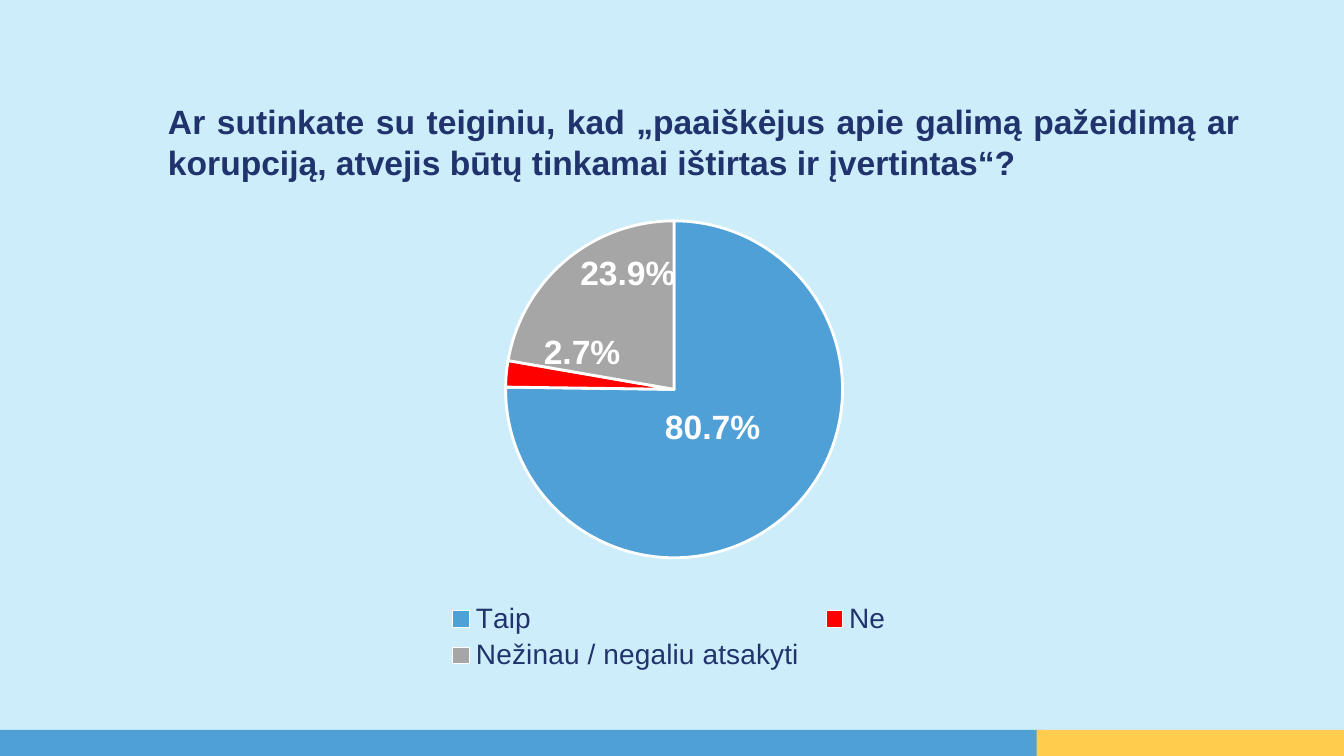
from pptx import Presentation
from pptx import util as u
from pptx.chart import data as chart_data
from pptx.dml.color import RGBColor
from pptx.enum import chart as chart_enum, shapes, text
from pptx.oxml import parse_xml
from pptx.oxml.ns import nsdecls

SKY = RGBColor(0xCD, 0xED, 0xFB)
BLUE = RGBColor(0x50, 0xA0, 0xD8)
YELLOW = RGBColor(0xFF, 0xCC, 0x4E)
RED = RGBColor(0xFF, 0x00, 0x00)
GREY = RGBColor(0xA6, 0xA6, 0xA6)
NAVY = RGBColor(0x20, 0x33, 0x6C)
WHITE = RGBColor(0xFF, 0xFF, 0xFF)

QUESTION = ("Ar sutinkate su teiginiu, kad „paaiškėjus apie galimą pažeidimą ar "
            "korupciją, atvejis būtų tinkamai ištirtas ir įvertintas“?")
ANSWERS = [
    ("Taip", 0.807, BLUE, (-2.3, -4.4)),
    ("Ne", 0.027, RED, (-0.9, -5.8)),
    ("Nežinau / negaliu atsakyti", 0.239, GREY, (0.9, -10.4)),
]
SERIES = {
    "Series 1": [answer[1] for answer in ANSWERS] + [None],
    "Series 2": [None] * 4,
    "Series 3": [None] * 4,
}
TITLE_FONT = {"name": "Arial", "size": u.Pt(24), "bold": True}
LABEL_FONT = TITLE_FONT
LEGEND_FONT = {"name": "Arial", "size": u.Pt(20), "bold": False}


def set_format(target, values):
    for name, value in values.items():
        setattr(target, name, value)


def set_font(font, values, color):
    set_format(font, values)
    font.color.rgb = color


def set_layout(element, index, percents, modes=None):
    for old_layout in element.xpath("./c:layout"):
        element.remove(old_layout)
    values = dict(modes or {})
    values.update({name: round(percent / 100, 4) for name, percent in percents.items()})
    settings = "".join(f'<c:{name} val="{value}"/>' for name, value in values.items())
    element.insert(index, parse_xml(
        f'<c:layout {nsdecls("c")}><c:manualLayout>{settings}</c:manualLayout></c:layout>'))


def add_question(slide, left, top, width, height):
    title = slide.shapes.title
    set_format(title, {"left": u.Pt(left), "top": u.Pt(top),
                       "width": u.Pt(width), "height": u.Pt(height)})
    frame = title.text_frame
    frame.text = QUESTION
    set_format(frame, {"word_wrap": True, "vertical_anchor": text.MSO_ANCHOR.TOP,
                       "auto_size": text.MSO_AUTO_SIZE.SHAPE_TO_FIT_TEXT})
    paragraph = frame.paragraphs[0]
    paragraph.alignment = text.PP_ALIGN.JUSTIFY
    set_font(paragraph.runs[0].font, TITLE_FONT, NAVY)


def add_answer_chart(slide, left, top, width, height):
    answers = chart_data.CategoryChartData(number_format="0.0%")
    answers.categories = [answer[0] for answer in ANSWERS]
    for name, values in SERIES.items():
        answers.add_series(name, values)
    chart = slide.shapes.add_chart(
        chart_enum.XL_CHART_TYPE.PIE, u.Pt(left), u.Pt(top),
        u.Pt(width), u.Pt(height), answers).chart
    chart.replace_data(answers)
    set_format(chart, {"has_title": False, "has_legend": True})
    set_font(chart.font, LEGEND_FONT, NAVY)
    set_format(chart.legend, {"position": chart_enum.XL_LEGEND_POSITION.BOTTOM,
                              "include_in_layout": False})
    set_font(chart.legend.font, LEGEND_FONT, NAVY)

    plot = chart.plots[0]
    plot.vary_by_categories = True
    series = plot.series[0]
    set_format(series.data_labels, {"show_value": True, "show_percentage": False,
                                    "number_format": "0.0%",
                                    "number_format_is_linked": False})
    set_font(series.data_labels.font, LABEL_FONT, WHITE)
    for index, (_, _, color, _) in enumerate(ANSWERS):
        point = series.points[index]
        point.format.fill.solid()
        point.format.fill.fore_color.rgb = color
        point.format.line.color.rgb = WHITE
        point.format.line.width = u.Pt(2)
        set_font(point.data_label.font, LABEL_FONT, WHITE)
        point.data_label.position = chart_enum.XL_LABEL_POSITION.CENTER

    space = chart._chartSpace
    for label, answer in zip(space.xpath(".//c:ser/c:dLbls/c:dLbl"), ANSWERS):
        set_layout(label, 1, dict(zip("xy", answer[3])))
    edges = {"xMode": "edge", "yMode": "edge"}
    set_layout(space.xpath(".//c:plotArea")[0], 0,
               {"x": 31.8, "y": 7.4, "w": 37.5, "h": 68.5},
               {"layoutTarget": "inner", **edges})
    legend = space.xpath(".//c:legend")[0]
    set_layout(legend, 1, {"x": 24, "y": 84, "w": 52, "h": 16}, edges)
    legend.insert(1, parse_xml(
        f'<c:legendEntry {nsdecls("c")}><c:idx val="{len(ANSWERS)}"/>'
        '<c:delete val="1"/></c:legendEntry>'))


def add_footer(slide, left, top, width, height):
    blue_width = 744.5
    yellow_left = 740.5
    bands = [(left, blue_width, BLUE),
             (left + yellow_left, width - yellow_left, YELLOW)]
    for band_left, band_width, color in bands:
        shape = slide.shapes.add_shape(
            shapes.MSO_SHAPE.RECTANGLE, u.Pt(band_left), u.Pt(top),
            u.Pt(band_width), u.Pt(height))
        shape.shadow.inherit = False
        shape.fill.solid()
        shape.fill.fore_color.rgb = color
        shape.line.fill.background()


def main():
    presentation = Presentation()
    set_format(presentation, {"slide_width": u.Pt(960), "slide_height": u.Pt(540)})
    slide = presentation.slides.add_slide(presentation.slide_layouts[5])
    slide.background.fill.solid()
    slide.background.fill.fore_color.rgb = SKY
    add_answer_chart(slide, 156.5, 131.8, 643, 351.4)
    add_footer(slide, 0, 521.3, 960, 18.7)
    add_question(slide, 112.8, 68.8, 779.8, 65.5)
    presentation.save("out.pptx")


if __name__ == "__main__":
    main()
